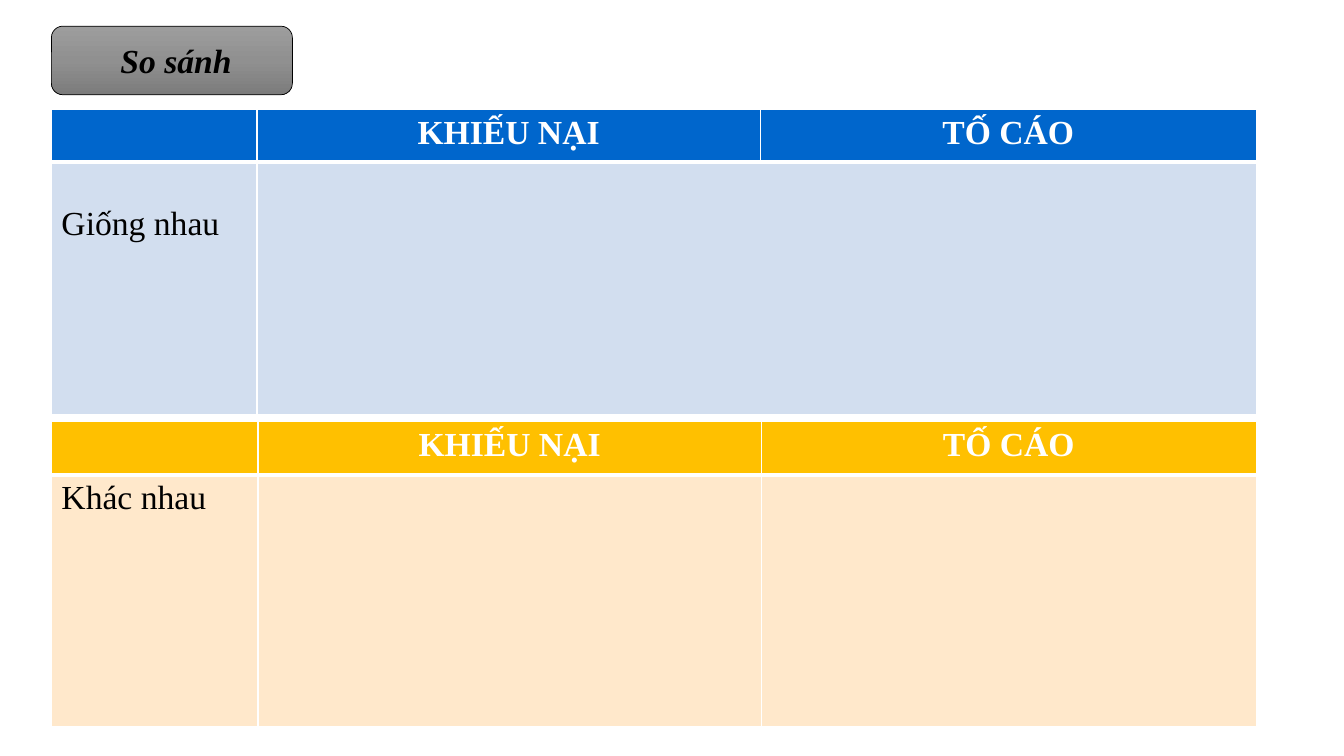
from copy import deepcopy

from lxml.etree import SubElement
from pptx import Presentation
from pptx.dml.color import RGBColor
from pptx.enum.shapes import MSO_SHAPE
from pptx.enum.text import MSO_ANCHOR, PP_ALIGN
from pptx.oxml.ns import qn
from pptx.util import Inches, Pt

BLACK = RGBColor(0, 0, 0)
WHITE = RGBColor(255, 255, 255)
BLUE = RGBColor(0x00, 0x66, 0xCC)
PALE_BLUE = RGBColor(0xD2, 0xDE, 0xEF)
GOLD = RGBColor(0xFF, 0xC0, 0x00)
CREAM = RGBColor(0xFF, 0xE8, 0xCB)
GRAYS = [RGBColor(v, v, v) for v in (0x9D, 0x90, 0x7C)]

LEFT, WIDTH = 0.51, 11.95
BODY = 2.5
FORMAT = {"name": "Times New Roman", "size": Pt(24)}


def write(frame, text, align, color, **more):
    par = frame.paragraphs[0]
    par.alignment = align
    run = par.add_run()
    run.text = text
    for key, value in {**FORMAT, **more}.items():
        setattr(run.font, key, value)
    run.font.color.rgb = color


def paint(cell, color, top, bottom):
    """Fill a cell and give it white borders, with own widths at top and bottom."""
    props = cell._tc.get_or_add_tcPr()
    for side, width in (("L", 1), ("R", 1), ("T", top), ("B", bottom)):
        line = SubElement(props, qn("a:ln" + side), w=str(Pt(width)))
        solid = SubElement(line, qn("a:solidFill"))
        SubElement(solid, qn("a:srgbClr"), val=str(WHITE))
    cell.fill.solid()
    cell.fill.fore_color.rgb = color


deck = Presentation()
deck.slide_width, deck.slide_height = Inches(13.33), Inches(7.5)
slide = deck.slides.add_slide(deck.slide_layouts[6])

# Title button
title = slide.shapes.add_shape(
    MSO_SHAPE.ROUNDED_RECTANGLE, *map(Inches, (LEFT, 0.26, 2.39, 0.68)))
title.shadow.inherit = False
title.line.color.rgb = BLACK
title.line.width = Pt(0.5)
title.fill.gradient()
title.fill.gradient_angle = 270
first = title._element.spPr.find(".//" + qn("a:gs"))
middle = deepcopy(first)
middle.set("pos", "50000")
first.addnext(middle)
for stop, gray in zip(title.fill.gradient_stops, GRAYS):
    stop.color.rgb = gray
title.text_frame.vertical_anchor = MSO_ANCHOR.MIDDLE
title.text_frame.margin_left = Inches(0.18)
write(title.text_frame, "So sánh", PP_ALIGN.CENTER, BLACK, bold=True, italic=True)

# Two tables: top, label column, head row, label, label inset, colours, merged body
TABLES = (
    (1.09, 2.04, 0.52, "Giống nhau", 0.43, BLUE, PALE_BLUE, True),
    (4.18, 2.05, 0.53, "Khác nhau", 0.05, GOLD, CREAM, False),
)
for top, label, head, name, inset, dark, pale, merged in TABLES:
    table = slide.shapes.add_table(
        2, 3, *map(Inches, (LEFT, top, WIDTH, head + BODY))).table
    for col, width in zip(table.columns, (label, 4.99, WIDTH - 4.99 - label)):
        col.width = Inches(width)
    for row, height, fill, edges in zip(
            table.rows, (head, BODY), (dark, pale), ((1, 3), (3, 1))):
        row.height = Inches(height)
        for cell in row.cells:
            paint(cell, fill, *edges)
    for col, text in enumerate(("KHIẾU NẠI", "TỐ CÁO"), 1):
        write(table.cell(0, col).text_frame, text, PP_ALIGN.CENTER, WHITE, bold=True)
    side = table.cell(1, 0)
    side.margin_top = Inches(inset)
    write(side.text_frame, name, PP_ALIGN.JUSTIFY, BLACK, bold=False)
    if merged:
        table.cell(1, 1).merge(table.cell(1, 2))

deck.save("out.pptx")
